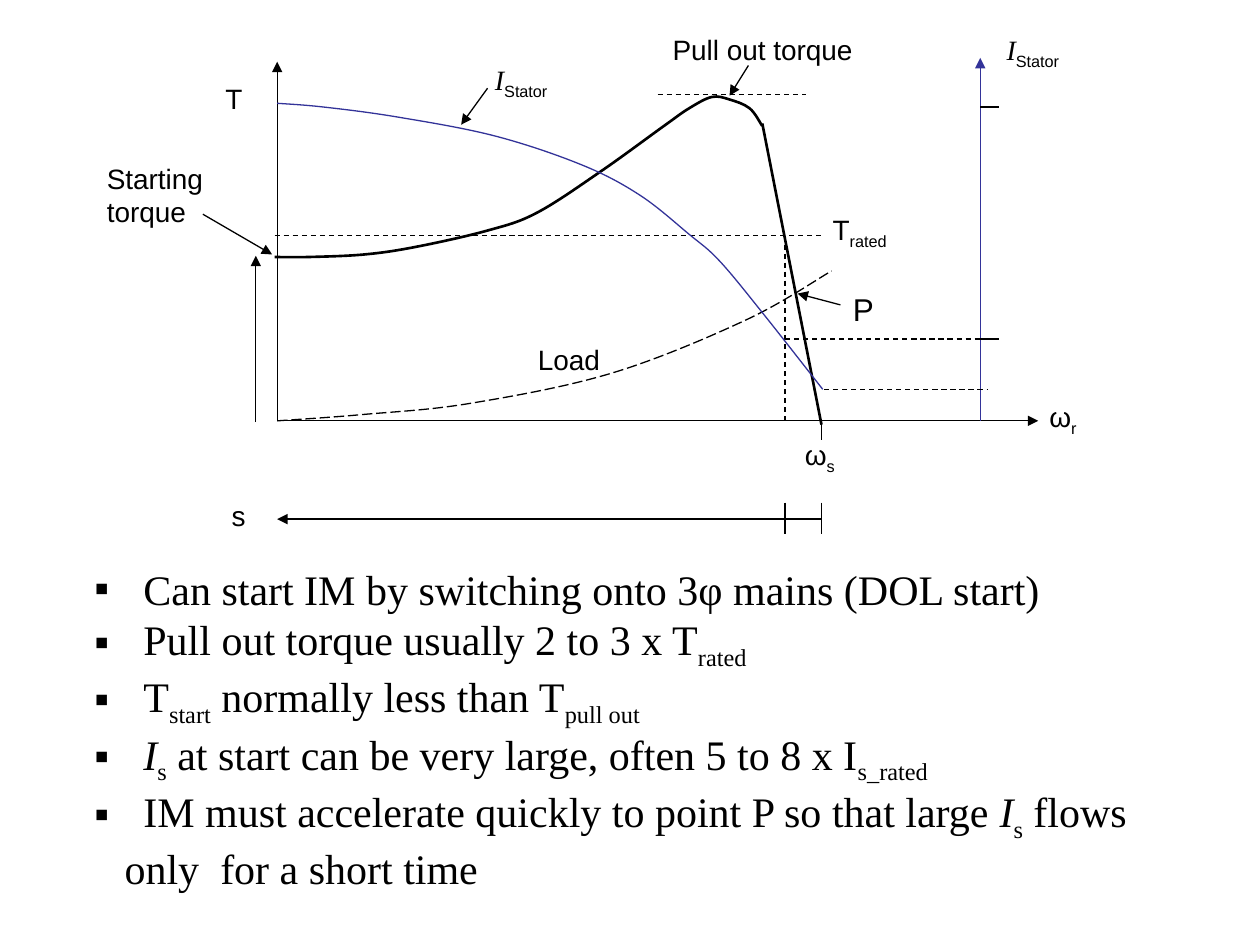
from lxml.etree import SubElement
from pptx import Presentation
from pptx.dml.color import RGBColor
from pptx.enum.dml import MSO_LINE
from pptx.enum.shapes import MSO_CONNECTOR, MSO_SHAPE
from pptx.enum.text import MSO_ANCHOR, PP_ALIGN
from pptx.oxml.ns import qn
from pptx.util import Inches, Pt

BLACK, WHITE, BLUE = "000000", "FFFFFF", "333399"
SANS, SERIF = "Arial", "Times New Roman"
DASH, LONG_DASH = MSO_LINE.DASH, MSO_LINE.LONG_DASH

# Guide positions of the diagram, in inches
ORIGIN_X, BASE_Y = 2.2, 3.34
RATED_X, SYNC_X, CURRENT_X = 6.23, 6.52, 7.78
RATED_TORQUE_Y, RATED_CURRENT_Y, NO_LOAD_Y = 1.87, 2.69, 3.09
PEAK_Y, START_Y, SLIP_Y = 0.75, 2.03, 4.12

LOAD_CURVE = [(ORIGIN_X, BASE_Y), (2.88, 3.29), (3.74, 3.2), (4.86, 2.96),
              (5.92, 2.54), (6.6, 2.15)]
TORQUE_CURVE = [(6.05, 1), (5.95, 0.86), (5.79, 0.79), (5.65, 0.77), (5.47, 0.86),
                (5.27, 1), (4.77, 1.36), (4.26, 1.69), (3.87, 1.83), (3.3, 1.96),
                (2.89, 2.02), (2.45, 2.04), (2.18, 2.04)]
CURRENT_CURVE = [(6.53, NO_LOAD_Y), (6.05, 2.48), (5.71, 2.07), (5.47, 1.86),
                 (5.08, 1.55), (4.62, 1.31), (3.93, 1.08), (3.16, 0.93),
                 (2.57, 0.85), (ORIGIN_X, 0.82)]

# Text pieces are (text, style); style is "", "sub" or "italic"
STATOR_CURRENT = [("I", "italic"), ("Stator", "sub")]
BOXED_LABELS = [
    ((1.74, 3.91, 0.74), [("s", "")]),
    ((1.69, 0.6, 0.5), [("T", "")]),
    ((8.23, 3.12, 0.5), [("ω", ""), ("r", "sub")]),
    ((6.29, 3.42, 0.5), [("ω", ""), ("s", "sub")]),
    ((6.51, 1.64, 0.89), [("T", ""), ("rated", "sub")]),
    ((7.89, 0.21, 0.89), STATOR_CURRENT),
    ((3.83, 0.45, 0.89), STATOR_CURRENT),
]
OPEN_LABELS = [
    ((6.67, 2.25, 0.42, 0.4), "P", 18),
    ((4.17, 2.67, 1.33, 0.37), "Load", 16),
    ((0.75, 1.23, 1.1, 0.64), "Starting torque", 16),
    ((5.24, 0.21, 1.73, 0.37), "Pull out torque", 16),
]
STATEMENTS = [
    [("\tCan start IM by switching onto 3φ mains (DOL start)", "")],
    [("\tPull out torque usually 2 to 3 x T", ""), ("rated", "sub")],
    [("\tT", ""), ("start", "sub"), (" normally less than T", ""), ("pull out", "sub")],
    [("\t", ""), ("I", "italic"), ("s", "sub"),
     (" at start can be very large, often 5 to 8 x I", ""), ("s_rated", "sub")],
    [("\tIM must accelerate quickly to point P so that large ", ""), ("I", "italic"),
     ("s", "sub"), (" flows only\tfor a short time", "")],
]


def color(hex_string):
    return RGBColor.from_string(hex_string)


def style_line(line, hex_string, width, dash):
    line.color.rgb = color(hex_string)
    line.width = Pt(width)
    if dash:
        line.dash_style = dash


def add_line(slide, start, end, hex_string=BLACK, width=0.75, dash=None, arrow=False):
    connector = slide.shapes.add_connector(
        MSO_CONNECTOR.STRAIGHT, *(Inches(v) for v in (*start, *end)))
    style_line(connector.line, hex_string, width, dash)
    if arrow:
        SubElement(connector.line._get_or_add_ln(), qn("a:tailEnd"), type="triangle")
    SubElement(connector._element.spPr, qn("a:effectLst"))


def add_curve(slide, knots, hex_string=BLACK, width=0.75, dash=None):
    """Draw a smooth Catmull-Rom curve through the knots."""
    points = [(Inches(x), Inches(y)) for x, y in knots]
    builder = slide.shapes.build_freeform(*points[0])
    builder.add_line_segments(points[1:], close=False)
    curve = builder.convert_to_shape()
    curve.shadow.inherit = False
    curve.fill.background()
    style_line(curve.line, hex_string, width, dash)

    left, top = (min(axis) for axis in zip(*points))
    local = [(x - left, y - top) for x, y in points]
    padded = [local[0], *local, local[-1]]
    segments = list(curve._element.iter(qn("a:lnTo")))
    for segment, before, a, b, after in zip(
            segments, padded, padded[1:], padded[2:], padded[3:]):
        leave = [q + (r - p) / 6 for p, q, r in zip(before, a, b)]
        arrive = [q - (r - p) / 6 for p, q, r in zip(a, b, after)]
        segment.tag = qn("a:cubicBezTo")
        segment.clear()
        for x, y in (leave, arrive, b):
            SubElement(segment, qn("a:pt"), x=str(round(x)), y=str(round(y)))


def write(paragraph, pieces, size, font_name):
    paragraph.alignment = PP_ALIGN.LEFT
    paragraph.font.size = Pt(size)
    paragraph.font.name = font_name
    paragraph.font.color.rgb = color(BLACK)
    for text, style in pieces:
        run = paragraph.add_run()
        run.text = text
        if style == "sub":
            run._r.get_or_add_rPr().set("baseline", "-25000")
        elif style == "italic":
            run.font.italic = True
            run.font.name = SERIF


def add_boxed_label(slide, place, pieces):
    left, top, width = (Inches(v) for v in place)
    label = slide.shapes.add_shape(MSO_SHAPE.RECTANGLE, left, top, width, Inches(0.48))
    label.shadow.inherit = False
    label.fill.solid()
    label.fill.fore_color.rgb = color(WHITE)
    label.line.fill.background()
    label.text_frame.vertical_anchor = MSO_ANCHOR.TOP
    write(label.text_frame.paragraphs[0], pieces, 16, SANS)


def add_text_frame(slide, place):
    frame = slide.shapes.add_textbox(*(Inches(v) for v in place)).text_frame
    frame.word_wrap = True
    return frame


def add_statements(slide):
    frame = add_text_frame(slide, (0.65, 4.53, 9, 2.5))
    frame.vertical_anchor = MSO_ANCHOR.MIDDLE
    for index, pieces in enumerate(STATEMENTS):
        paragraph = frame.add_paragraph() if index else frame.paragraphs[0]
        properties = paragraph._p.get_or_add_pPr()
        properties.set("marL", str(Inches(0.24)))
        properties.set("indent", str(-Inches(0.24)))
        SubElement(properties, qn("a:buFont"), typeface=SERIF)
        SubElement(properties, qn("a:buChar"), char="▪")
        tabs = SubElement(properties, qn("a:tabLst"))
        SubElement(tabs, qn("a:tab"), pos=str(Inches(0.39)), algn="l")
        write(paragraph, pieces, 24, SERIF)


def add_axes(slide):
    add_line(slide, (ORIGIN_X, BASE_Y), (ORIGIN_X, 0.49), arrow=True)
    add_line(slide, (ORIGIN_X, BASE_Y), (8.24, BASE_Y), arrow=True)
    add_line(slide, (CURRENT_X, BASE_Y), (CURRENT_X, 0.46), BLUE, arrow=True)
    for y in (0.85, RATED_CURRENT_Y):
        add_line(slide, (CURRENT_X, y), (CURRENT_X + 0.15, y))
    add_line(slide, (SYNC_X, BASE_Y), (SYNC_X, 3.49))
    # Slip scale
    add_line(slide, (SYNC_X, SLIP_Y), (ORIGIN_X, SLIP_Y), arrow=True)
    for x in (RATED_X, SYNC_X):
        add_line(slide, (x, SLIP_Y - 0.13), (x, SLIP_Y + 0.12))


def add_guides(slide):
    for start, end in [
        ((2.18, RATED_TORQUE_Y), (SYNC_X, RATED_TORQUE_Y)),
        ((RATED_X, RATED_TORQUE_Y), (RATED_X, BASE_Y)),
        ((5.22, PEAK_Y), (6.4, PEAK_Y)),
        ((RATED_X, RATED_CURRENT_Y), (CURRENT_X, RATED_CURRENT_Y)),
        ((6.54, NO_LOAD_Y), (7.84, NO_LOAD_Y)),
    ]:
        add_line(slide, start, end, dash=DASH)


def add_pointers(slide):
    for start, end in [
        ((3.87, 0.7), (3.66, 0.99)),       # stator current
        ((2.03, 3.35), (2.03, START_Y)),   # height of starting torque
        ((6.67, 2.42), (6.33, 2.33)),      # point P
        ((1.61, 1.7), (2.16, 2.02)),       # starting torque
        ((5.94, 0.52), (5.79, 0.76)),      # pull out torque
    ]:
        add_line(slide, start, end, arrow=True)


def main():
    presentation = Presentation()
    presentation.slide_width, presentation.slide_height = Inches(10), Inches(7.5)
    slide = presentation.slides.add_slide(presentation.slide_layouts[6])
    add_statements(slide)
    # Labels with a white ground lie below the lines
    for place, pieces in BOXED_LABELS:
        add_boxed_label(slide, place, pieces)
    # Diagram
    add_axes(slide)
    add_guides(slide)
    add_curve(slide, LOAD_CURVE, dash=LONG_DASH)
    add_curve(slide, TORQUE_CURVE, width=1.5)
    add_line(slide, (SYNC_X, 3.37), (6.05, 0.98), width=1.5)
    add_curve(slide, CURRENT_CURVE, BLUE)
    add_pointers(slide)
    for place, text, size in OPEN_LABELS:
        write(add_text_frame(slide, place).paragraphs[0], [(text, "")], size, SANS)
    presentation.save("out.pptx")


if __name__ == "__main__":
    main()
